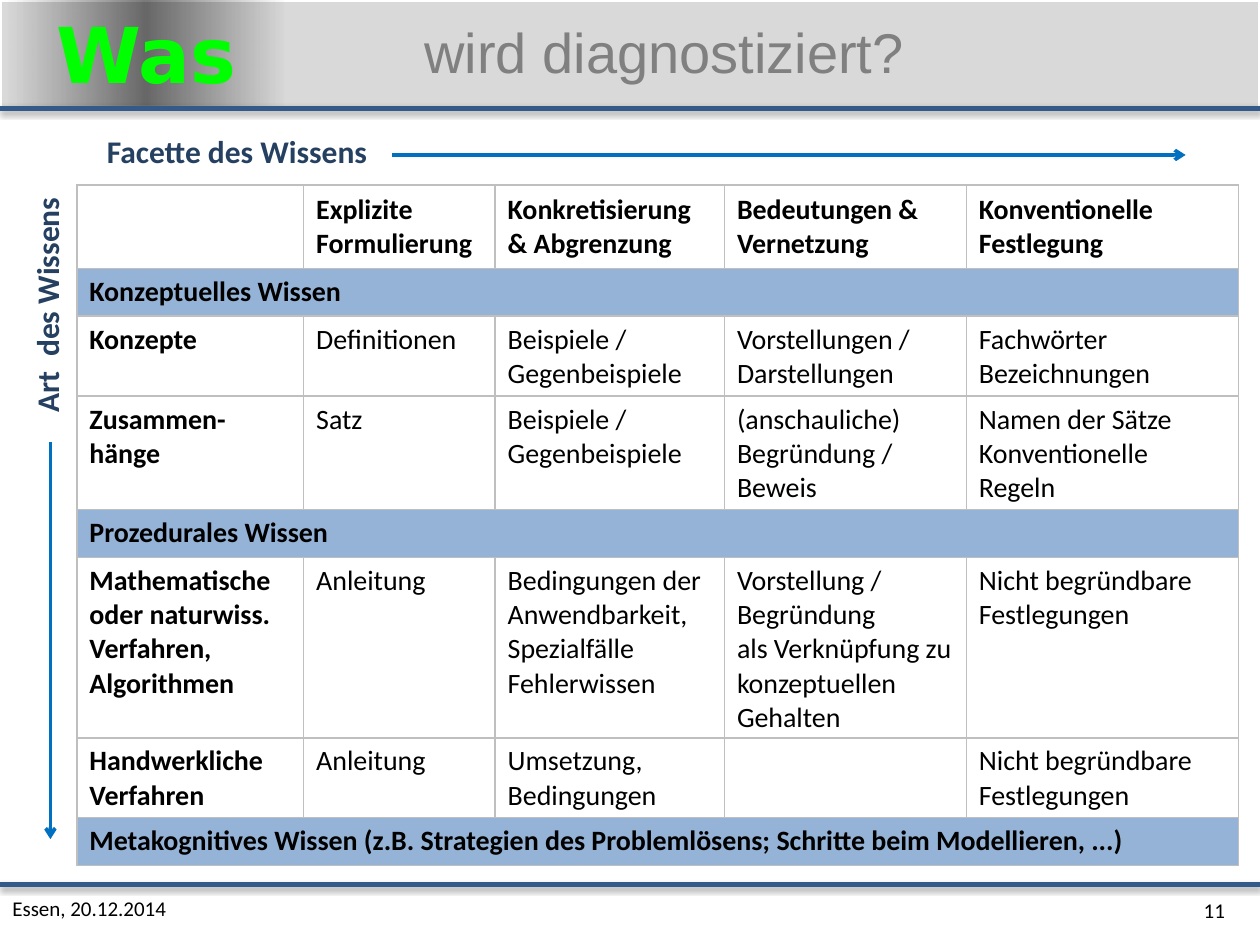
"""Build the slide on facets and kinds of knowledge being diagnosed."""
import pptx
import pptx.util
import pptx.dml.color
import pptx.enum.shapes
import pptx.enum.text
import pptx.oxml.ns
from lxml import etree

COLORS = {
    "band": "D9D9D9", "white": "FFFFFF", "rule": "345A8A", "title": "808080",
    "was": "00FF00", "black": "000000", "section": "95B3D7", "grid": "BFBFBF",
    "axis": "254061", "arrow": "0070C0",
}
RGB = {k: pptx.dml.color.RGBColor.from_string(v) for k, v in COLORS.items()}
ALIGN = pptx.enum.text.PP_ALIGN
MIDDLE = pptx.enum.text.MSO_ANCHOR.MIDDLE
qn = pptx.oxml.ns.qn

prs = pptx.Presentation()
prs.slide_width = pptx.util.Inches(10)
prs.slide_height = pptx.util.Inches(7.5)
COL, ROW = prs.slide_width // 100, prs.slide_height // 75
s = prs.slides.add_slide(prs.slide_layouts[6])


def write(sp, text, size, color, font="Calibri", bold=False, align=ALIGN.LEFT, wrap=True):
    tf = sp.text_frame
    tf.text = text
    tf.word_wrap = wrap
    tf.vertical_anchor = MIDDLE
    p = tf.paragraphs[0]
    p.alignment = align
    p.font.size = pptx.util.Pt(size)
    p.font.name = font
    p.font.bold = bold
    p.font.color.rgb = RGB[color]
    return p


def line(x1, y1, x2, y2, color, width):
    c = s.shapes.add_connector(pptx.enum.shapes.MSO_CONNECTOR.STRAIGHT,
                               int(x1 * COL), int(y1 * ROW), int(x2 * COL), int(y2 * ROW))
    c.line.color.rgb = RGB[color]
    c.line.width = pptx.util.Pt(width)
    return c, etree.SubElement(c._element.spPr, qn("a:effectLst"))


bars = []
for left, width, height in ((0, 100, 8.7), (0.6, 22, 8.4)):
    sp = s.shapes.add_shape(pptx.enum.shapes.MSO_SHAPE.RECTANGLE, int(left * COL), 0,
                            int(width * COL), int(height * ROW))
    sp.shadow.inherit = False
    bars.append(sp)
band, was = bars
band.fill.solid()
band.fill.fore_color.rgb = RGB["band"]
band.line.color.rgb = RGB["white"]
band.line.width = pptx.util.Pt(2)

was.line.fill.background()
was.fill.gradient()
was.fill.gradient_angle = 0
stops = was._element.spPr.find(qn("a:gradFill")).find(qn("a:gsLst"))
for stop in list(stops):
    stops.remove(stop)
for pos, opacity in ((0, 0), (50, 52), (100, 0)):
    stop = etree.SubElement(stops, qn("a:gs"), pos=str(pos * 1000))
    clr = etree.SubElement(stop, qn("a:srgbClr"), val=COLORS["black"])
    etree.SubElement(clr, qn("a:alpha"), val=str(opacity * 1000))
write(was, "Was", 44, "was", "DejaVu Sans", True, ALIGN.CENTER)

for y in (8.6, 70.2):
    c, effects = line(0, y, 100, y, "rule", 3)
    shadow = etree.SubElement(effects, qn("a:outerShdw"), blurRad="40000", dist="20000",
                              dir="5400000", rotWithShape="0")
    clr = etree.SubElement(shadow, qn("a:srgbClr"), val=COLORS["black"])
    etree.SubElement(clr, qn("a:alpha"), val="38000")

for ends in ((31.1, 12.3, 94.1, 12.3), (4, 35.1, 4, 66.6)):
    c, effects = line(*ends, "arrow", 2)
    etree.SubElement(c.line._get_or_add_ln(), qn("a:tailEnd"), type="arrow")

LABELS = [
    ((32.7, 0.2, 67.3, 8.4), "wird diagnostiziert?", 32, "title", "Arial", False, ALIGN.LEFT, True, 0),
    ((7.5, 10, 23, 4), "Facette des Wissens", 18, "axis", "Calibri", True, ALIGN.LEFT, True, 0),
    ((-5.9, 22.3, 19.2, 4), "Art  des Wissens", 18, "axis", "Calibri", True, ALIGN.RIGHT, False, 270),
    ((0, 70.1, 90, 4), "Essen, 20.12.2014", 12, "black", "Calibri", False, ALIGN.LEFT, True, 0),
    ((92.2, 70.2, 6, 4), "11", 12, "black", "Calibri", False, ALIGN.RIGHT, True, 0),
]
for (x, y, w, h), *style, rotation in LABELS:
    sp = s.shapes.add_textbox(int(x * COL), int(y * ROW), int(w * COL), int(h * ROW))
    sp.rotation = rotation
    p = write(sp, *style)
    if style[0].startswith("wird"):
        p.line_spacing = 0.9

ROWS = [
    ["", "Explizite \vFormulierung", "Konkretisierung & Abgrenzung",
     "Bedeutungen & Vernetzung", "Konventionelle Festlegung"],
    ["Konzeptuelles Wissen"],
    ["Konzepte", "Definitionen", "Beispiele / \vGegenbeispiele",
     "Vorstellungen / \vDarstellungen", "Fachwörter\nBezeichnungen"],
    ["Zusammen-hänge", "Satz", "Beispiele / \vGegenbeispiele",
     "(anschauliche) Begründung /\nBeweis", "Namen der Sätze\nKonventionelle\nRegeln"],
    ["Prozedurales Wissen"],
    ["Mathematische oder naturwiss. Verfahren, Algorithmen", "Anleitung",
     "Bedingungen der Anwendbarkeit, Spezialfälle\nFehlerwissen",
     "Vorstellung / Begründung \vals Verknüpfung zu konzeptuellen Gehalten",
     "Nicht begründbare Festlegungen"],
    ["Handwerkliche Verfahren", "Anleitung", "Umsetzung, Bedingungen", "",
     "Nicht begründbare Festlegungen"],
    ["Metakognitives Wissen (z.B. Strategien des Problemlösens; Schritte beim Modellieren, ...)"],
]
WIDTHS = [18, 15.2, 18.2, 19.2, 21.6]
HEIGHTS = [6.6, 3.8, 5.7, 8.8, 3.8, 13.3, 6.1, 3.8]
table = s.shapes.add_table(len(ROWS), len(WIDTHS), int(6.1 * COL), int(14.7 * ROW),
                           int(sum(WIDTHS) * COL), int(sum(HEIGHTS) * ROW)).table
table.first_row = table.horz_banding = False
for column, width in zip(table.columns, WIDTHS):
    column.width = int(width * COL)
for i, (texts, height) in enumerate(zip(ROWS, HEIGHTS)):
    table.rows[i].height = int(height * ROW)
    section = len(texts) == 1
    if section:
        table.cell(i, 0).merge(table.cell(i, len(WIDTHS) - 1))
    for j in range(len(WIDTHS)):
        cell = table.cell(i, j)
        tcPr = cell._tc.get_or_add_tcPr()
        for side in ("a:lnL", "a:lnR", "a:lnT", "a:lnB"):
            ln = etree.SubElement(tcPr, qn(side), w=str(pptx.util.Pt(1)))
            etree.SubElement(etree.SubElement(ln, qn("a:solidFill")), qn("a:srgbClr"),
                             val=COLORS["grid"])
        if section:
            cell.fill.solid()
            cell.fill.fore_color.rgb = RGB["section"]
        else:
            cell.fill.background()
        if i == 0:
            cell.vertical_anchor = MIDDLE
        if j < len(texts):
            cell.text_frame.text = texts[j]
        for p in cell.text_frame.paragraphs:
            p.font.size = pptx.util.Pt(16)
            p.font.name = "Calibri"
            p.font.bold = i == 0 or j == 0
            p.font.color.rgb = RGB["black"]

prs.save("out.pptx")
